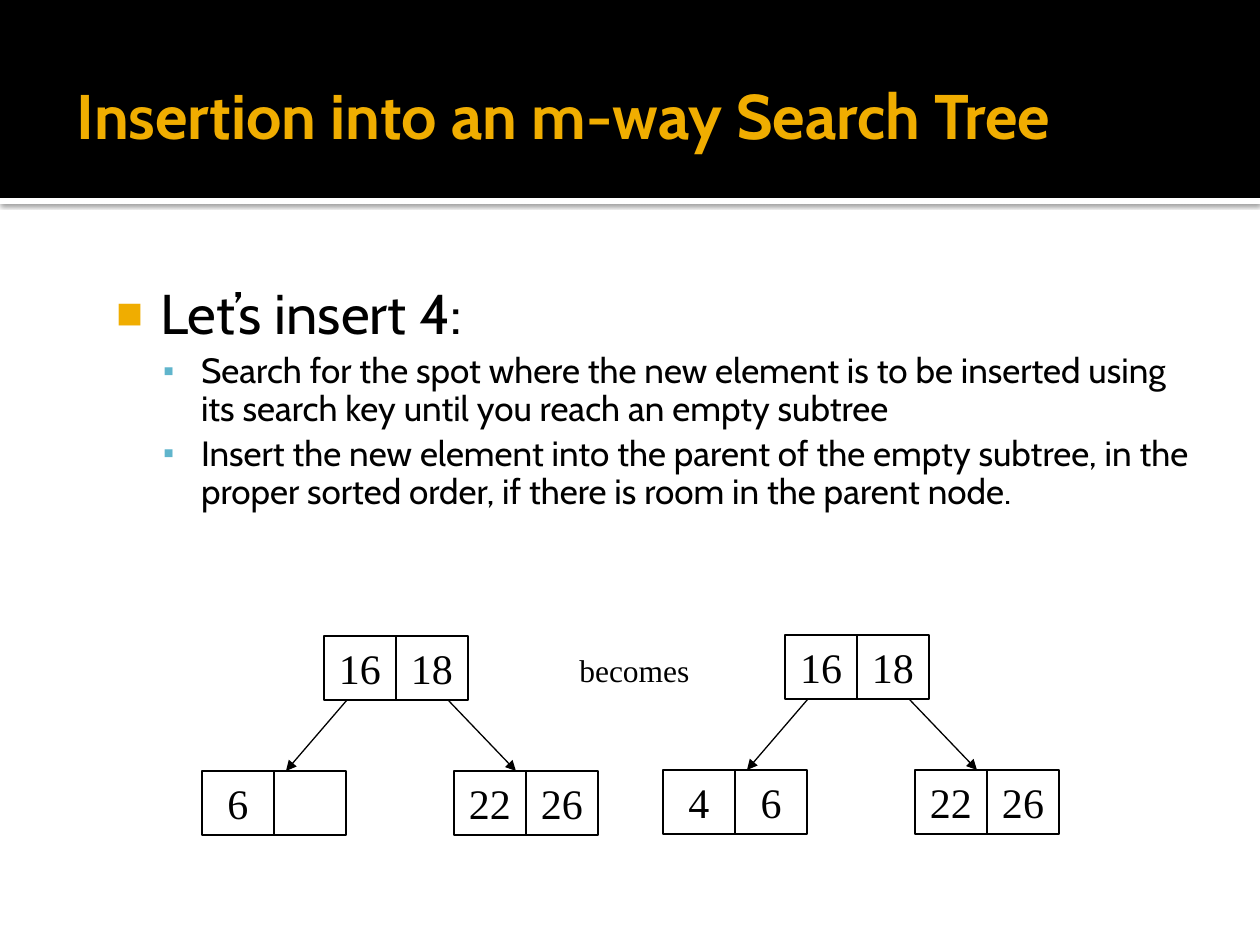
from lxml.etree import SubElement
from pptx import Presentation
from pptx.dml.color import RGBColor
from pptx.enum.shapes import MSO_CONNECTOR, MSO_SHAPE
from pptx.enum.text import MSO_ANCHOR, MSO_AUTO_SIZE, PP_ALIGN
from pptx.oxml import parse_xml
from pptx.oxml.ns import nsdecls, qn
from pptx.util import Pt

SCALE = 914400 / 126  # EMU per px


def px(*lengths):
    return [round(length * SCALE) for length in lengths]


def color(hex_string):
    return RGBColor.from_string(hex_string)


presentation = Presentation()
presentation.slide_width, presentation.slide_height = px(1260, 945)
slide = presentation.slides.add_slide(presentation.slide_layouts[1])
shapes = slide.shapes
title, body = shapes.title, slide.placeholders[1]

# Header bands, placed behind the placeholders
bands = [((0, 198, 1260, 6), "FFFFFF"), ((0, 0, 1260, 198), "000000")]
for position, (box, fill) in enumerate(bands, start=2):
    band = shapes.add_shape(MSO_SHAPE.RECTANGLE, *px(*box))
    band.shadow.inherit = False
    band.fill.solid()
    band.fill.fore_color.rgb = color(fill)
    band.line.fill.background()
    if fill == "FFFFFF":
        band._element.spPr.find(qn("a:effectLst")).append(parse_xml(
            f'<a:outerShdw {nsdecls("a")} blurRad="31750" dist="10160" dir="5400000">'
            '<a:srgbClr val="000000"><a:alpha val="60000"/></a:srgbClr></a:outerShdw>'))
    shapes._spTree.insert(position, band._element)

# Title and body frames
frames = [
    (title, (64, 35, 1130, 158), (13, 6, 6, 6), MSO_ANCHOR.MIDDLE),
    (body, (92, 273, 1110, 272), (8, 13, 13, 6), MSO_ANCHOR.TOP),
]
for shape, box, insets, anchor in frames:
    shape.left, shape.top, shape.width, shape.height = px(*box)
    left, top, right, bottom = px(*insets)
    frame_format = {
        "margin_left": left, "margin_top": top, "margin_right": right,
        "margin_bottom": bottom, "vertical_anchor": anchor,
        "word_wrap": True, "auto_size": MSO_AUTO_SIZE.NONE,
    }
    for name, value in frame_format.items():
        setattr(shape.text_frame, name, value)

# Title text
title.text_frame.text = "Insertion into an m-way Search Tree"
paragraph = title.text_frame.paragraphs[0]
paragraph.alignment = PP_ALIGN.LEFT
title_font = {"name": "Cabin", "size": Pt(36), "bold": True}
for name, value in title_font.items():
    setattr(paragraph.runs[0].font, name, value)
paragraph.runs[0].font.color.rgb = color("F0AD00")

# Bulleted steps
level_formats = [
    {"size": 32, "before": 0, "indent": (60, -44), "bullet": ("■", "F0AD00", 80)},
    {"size": 20, "before": 4, "indent": (101, -38), "bullet": ("▪", "60B5CC", 90)},
]
steps = [
    (0, "Let’s insert 4:"),
    (1, "Search for the spot where the new element is to be inserted using "
        "its search key until you reach an empty subtree"),
    (1, "Insert the new element into the parent of the empty subtree, in the "
        "proper sorted order, if there is room in the parent node."),
]
body.text_frame.text = "\n".join(text for level, text in steps)
for paragraph, (level, text) in zip(body.text_frame.paragraphs, steps):
    level_format = level_formats[level]
    paragraph.level = level
    paragraph.line_spacing = 0.9
    paragraph.space_before = Pt(level_format["before"])
    font = paragraph.runs[0].font
    font.name, font.size = "Cabin", Pt(level_format["size"])
    font.color.rgb = color("000000")
    properties = paragraph._p.get_or_add_pPr()
    margin, indent = px(*level_format["indent"])
    properties.set("marL", str(margin))
    properties.set("indent", str(indent))
    character, bullet_color, percent = level_format["bullet"]
    SubElement(SubElement(properties, qn("a:buClr")), qn("a:srgbClr"), val=bullet_color)
    SubElement(properties, qn("a:buSzPct"), val=str(percent * 1000))
    SubElement(properties, qn("a:buFont"), typeface="Arial")
    SubElement(properties, qn("a:buChar"), char=character)

# Label between the trees
label = shapes.add_textbox(*px(567, 645, 136, 50))
label.text_frame.word_wrap = False
label.text_frame.text = "becomes"
font = label.text_frame.paragraphs[0].runs[0].font
font.name, font.size = "Times New Roman", Pt(18)
font.color.rgb = color("000000")

# Trees before and after: a root and two leaves, each node two cells wide
CELL_WIDTH, CELL_HEIGHT = 72, 64
NODE_OFFSETS = [(0, 0), (-122, 135), (130, 135)]
ARROWS = [((23, 64), (-38, 135)), ((124, 64), (192, 135))]
trees = [
    ((324, 636), [("16", "18"), ("6", ""), ("22", "26")]),
    ((785, 635), [("16", "18"), ("4", "6"), ("22", "26")]),
]
for (root_x, root_y), nodes in trees:
    for (offset_x, offset_y), keys in zip(NODE_OFFSETS, nodes):
        for column, key in enumerate(keys):
            cell = shapes.add_shape(MSO_SHAPE.RECTANGLE, *px(
                root_x + offset_x + column * CELL_WIDTH, root_y + offset_y,
                CELL_WIDTH, CELL_HEIGHT))
            cell.shadow.inherit = False
            cell.fill.background()
            cell.line.color.rgb = color("000000")
            cell.line.width = Pt(0.75)
            if key:
                cell.text_frame.text = key
                cell.text_frame.vertical_anchor = MSO_ANCHOR.TOP
                paragraph = cell.text_frame.paragraphs[0]
                paragraph.alignment = PP_ALIGN.CENTER
                font = paragraph.runs[0].font
                font.name, font.size = "Times New Roman", Pt(24)
                font.color.rgb = color("000000")

    for (start_x, start_y), (end_x, end_y) in ARROWS:
        arrow = shapes.add_connector(MSO_CONNECTOR.STRAIGHT, *px(
            root_x + start_x, root_y + start_y, root_x + end_x, root_y + end_y))
        arrow.line.color.rgb = color("000000")
        arrow.line.width = Pt(0.75)
        SubElement(arrow.line._get_or_add_ln(), qn("a:tailEnd"), type="triangle")
        SubElement(arrow._element.spPr, qn("a:effectLst"))

presentation.save("out.pptx")
